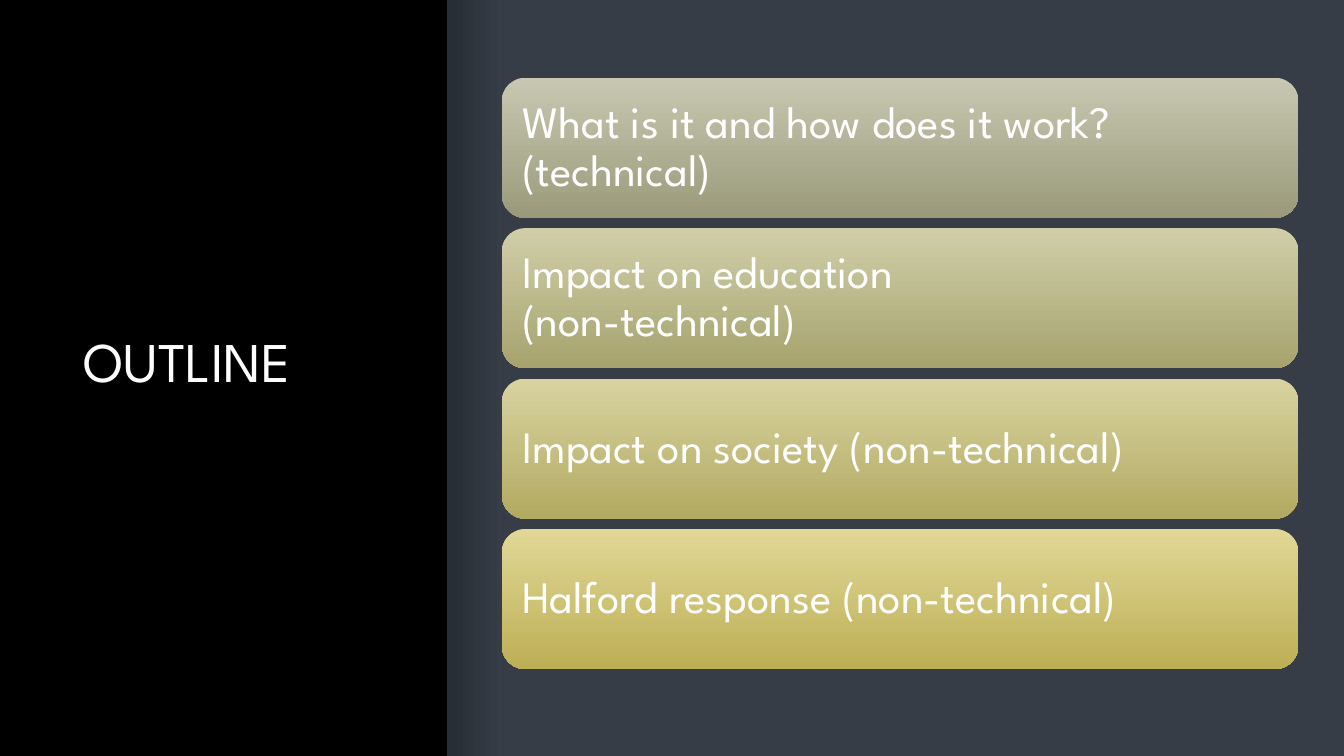
from lxml import etree
from pptx import Presentation
from pptx import util as u
from pptx.dml.color import RGBColor
from pptx.enum import shapes, text

FONT = "League Spartan"
HUES = {"back": "000000", "panel": "363D46", "edge": "282E35", "ink": "FFFFFF"}
CARDS = [
    ("What is it and how does it work? (technical)", "C8C8B2", "9A9A7B"),
    ("Impact on education\v(non-technical)", "D0CEA9", "A6A36E"),
    ("Impact on society (non-technical)", "D8D3A0", "B2AA62"),
    ("Halford response (non-technical)", "E1D797", "BDAF55"),
]


def paint(fill, *hues, angle=0):
    """Fill with one colour, or with a gradient of two."""
    if len(hues) == 1:
        fill.solid()
        fill.fore_color.rgb = RGBColor.from_string(hues[0])
        return
    fill.gradient()
    fill.gradient_angle = angle
    for stop, hue in zip(fill.gradient_stops, hues):
        stop.color.rgb = RGBColor.from_string(hue)


def block(slide, kind, box, *hues, angle=0):
    """Add a plain shape without line or shadow."""
    shape = slide.shapes.add_shape(kind, *map(u.Cm, box))
    shape.shadow.inherit = False
    shape.line.fill.background()
    paint(shape.fill, *hues, angle=angle)
    return shape


def write(shape, words, size, inset, space=1.0):
    """Set left-aligned, vertically centred text in a shape."""
    frame = shape.text_frame
    frame.word_wrap = True
    frame.vertical_anchor = text.MSO_ANCHOR.MIDDLE
    frame.margin_left = frame.margin_right = u.Cm(inset)
    frame.margin_top = frame.margin_bottom = u.Cm(inset)
    para = frame.paragraphs[0]
    para.text = words
    para.alignment = text.PP_ALIGN.LEFT
    para.line_spacing = space
    for run in para.runs:
        run.font.name = FONT
        run.font.size = u.Pt(size)
        run.font.color.rgb = RGBColor.from_string(HUES["ink"])


def title(slide, box):
    """Place the slide heading."""
    write(slide.shapes.add_textbox(*map(u.Cm, box)), "OUTLINE", 40, 0.25)


def panel(slide, box):
    """Draw the right panel with its edge line and inner shade."""
    left, top, wide, high = box
    rect = shapes.MSO_SHAPE.RECTANGLE
    block(slide, rect, box, HUES["panel"])
    ends = (left + 0.03, top, left + 0.03, top + high)
    line = slide.shapes.add_connector(shapes.MSO_CONNECTOR.STRAIGHT, *map(u.Cm, ends))
    line.line.width = u.Pt(3)
    line.line.color.rgb = RGBColor.from_string(HUES["edge"])
    props = line.element.spPr
    etree.SubElement(props, props.tag.split("}")[0].replace("presentationml", "drawingml")
                     .replace("drawingml/2006/main", "drawingml/2006/main") + "}effectLst")
    block(slide, rect, (left + 0.09, top, 1.3, high), HUES["edge"], HUES["panel"])


def cards(slide, box, gap):
    """Stack the topic cards evenly in a box."""
    left, top, wide, high = box
    tall = (high - gap * (len(CARDS) - 1)) / len(CARDS)
    for row, (words, light, dark) in enumerate(CARDS):
        spot = (left, top + row * (tall + gap), wide, tall)
        card = block(slide, shapes.MSO_SHAPE.ROUNDED_RECTANGLE, spot, light, dark, angle=270)
        write(card, words, 32, 0.34, space=0.9)


def main():
    """Build and save the slide."""
    deck = Presentation()
    deck.slide_width, deck.slide_height = u.Cm(33.87), u.Cm(19.05)
    slide = deck.slides.add_slide(deck.slide_layouts[6])
    paint(slide.background.fill, HUES["back"])
    title(slide, (1.85, 3.96, 8.41, 10.21))
    panel(slide, (11.28, 0, 22.59, 19.05))
    cards(slide, (12.65, 1.96, 20.07, 14.9), 0.26)
    deck.save("out.pptx")


if __name__ == "__main__":
    main()
